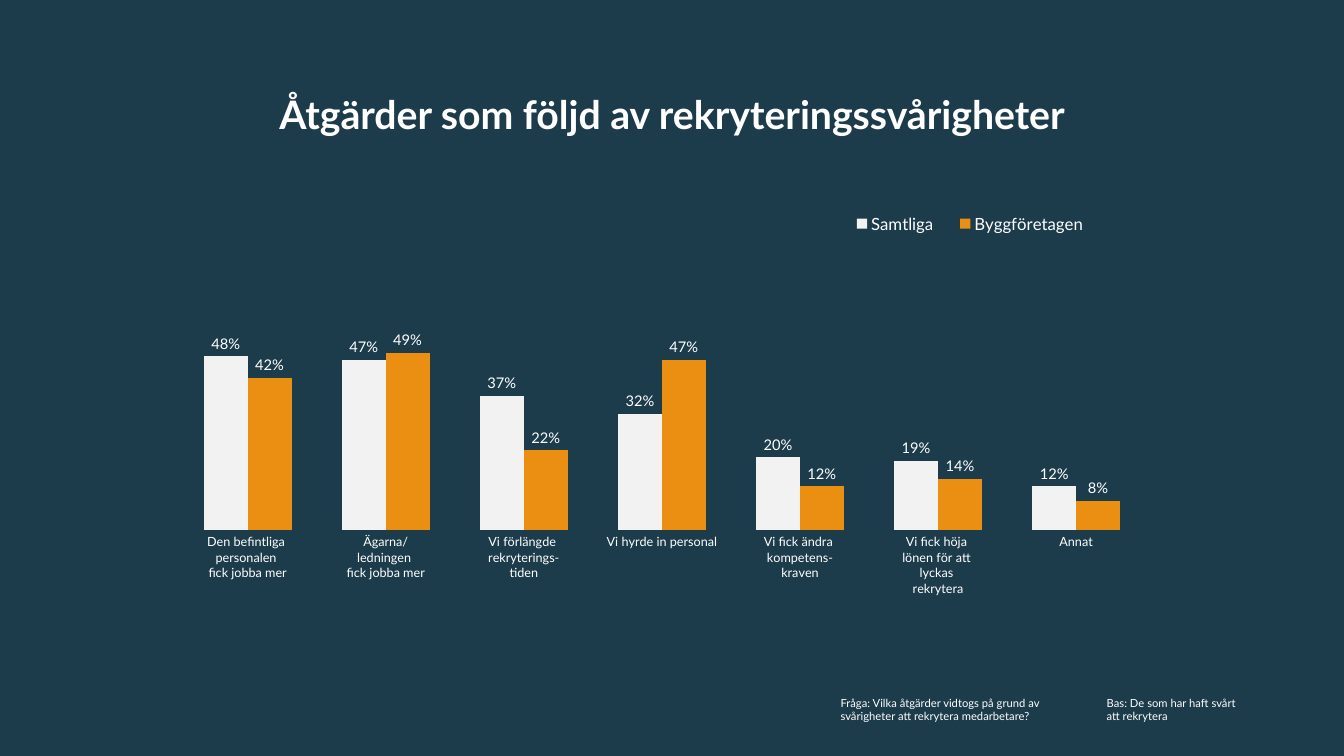
from dataclasses import dataclass

import pptx
import pptx.chart.data
import pptx.dml.color
import pptx.enum.chart
import pptx.enum.text
import pptx.oxml
import pptx.oxml.ns
import pptx.util

Pt = pptx.util.Pt
FONT = "Lato"
COLORS = {
    "background": "1D3C4B",
    "text": "FFFFFF",
    "all": "F2F2F2",
    "builders": "EA8F12",
}


@dataclass(frozen=True)
class Frame:
    left: float
    top: float
    width: float
    height: float

    def lengths(self) -> tuple:
        return tuple(Pt(v) for v in (self.left, self.top, self.width, self.height))


@dataclass(frozen=True)
class Label:
    text: str
    frame: Frame
    size: float
    heading: bool = False


@dataclass(frozen=True)
class Group:
    name: str
    shares: tuple[int, ...]
    color: str


HEADING = Label("Åtgärder som följd av rekryteringssvårigheter",
                Frame(0, 51, 960, 65.5), 28, heading=True)
BASE = Label("Bas: De som har haft svårt att rekrytera",
             Frame(783.4, 493.9, 109.4, 26.6), 8)
QUESTION = Label("Fråga: Vilka åtgärder vidtogs på grund av svårigheter "
                 "att rekrytera medarbetare?",
                 Frame(593.3, 493.9, 190, 26.6), 8)
MEASURES = (
    "Den befintliga \npersonalen \nfick jobba mer",
    "Ägarna/\nledningen \nfick jobba mer",
    "Vi förlängde \nrekryterings-\ntiden",
    "Vi hyrde in personal",
    "Vi fick ändra \nkompetens-\nkraven",
    "Vi fick höja \nlönen för att \nlyckas \nrekrytera",
    "Annat",
)
GROUPS = (
    Group("Samtliga", (48, 47, 37, 32, 20, 19, 12), "all"),
    Group("Byggföretagen", (42, 49, 22, 47, 12, 14, 8), "builders"),
)
CHART_FRAME = Frame(63.4, 116.6, 833.8, 319.7)
# Fractions of the chart frame
PLOT_AREA = Frame(0.077, 0.012, 0.828, 0.807)
LEGEND_AREA = Frame(0.64, 0.1, 0.23, 0.07)


def rgb(name: str) -> pptx.dml.color.RGBColor:
    return pptx.dml.color.RGBColor.from_string(COLORS[name])


def style_font(font, size: float, bold: bool = False) -> None:
    font.name = FONT
    font.size = Pt(size)
    font.bold = bold
    font.color.rgb = rgb("text")


def add_label(slide, label: Label) -> None:
    frame = slide.shapes.add_textbox(*label.frame.lengths()).text_frame
    frame.word_wrap = True
    paragraph = frame.paragraphs[0]
    paragraph.text = label.text
    style_font(paragraph.font, label.size, label.heading)
    if label.heading:
        frame.vertical_anchor = pptx.enum.text.MSO_ANCHOR.MIDDLE
        paragraph.alignment = pptx.enum.text.PP_ALIGN.CENTER
        paragraph.line_spacing = 0.9
    else:
        frame.auto_size = pptx.enum.text.MSO_AUTO_SIZE.SHAPE_TO_FIT_TEXT


def manual_layout(area: Frame, inner: bool = False):
    """Return a c:layout element for an area given in chart fractions."""
    target = '<c:layoutTarget val="inner"/>' if inner else ""
    return pptx.oxml.parse_xml(
        f'<c:layout {pptx.oxml.ns.nsdecls("c")}><c:manualLayout>{target}'
        '<c:xMode val="edge"/><c:yMode val="edge"/>'
        f'<c:x val="{area.left}"/><c:y val="{area.top}"/>'
        f'<c:w val="{area.width}"/><c:h val="{area.height}"/>'
        "</c:manualLayout></c:layout>")


def place_areas(chart) -> None:
    """Fix the places of the plot and the legend inside the chart."""
    root = chart.element
    for layout in root.xpath(".//c:plotArea/c:layout | .//c:legend/c:layout"):
        layout.getparent().remove(layout)
    root.xpath(".//c:plotArea")[0].insert(0, manual_layout(PLOT_AREA, inner=True))
    root.xpath(".//c:legend/c:overlay")[0].addprevious(manual_layout(LEGEND_AREA))


def style_axes(chart) -> None:
    none = pptx.enum.chart.XL_TICK_MARK.NONE
    measures = chart.category_axis
    measures.major_tick_mark = none
    measures.minor_tick_mark = none
    measures.format.line.fill.background()
    style_font(measures.tick_labels.font, 9)
    shares = chart.value_axis
    shares.minimum_scale = 0
    shares.maximum_scale = 100
    shares.major_unit = 20
    shares.has_major_gridlines = False
    shares.visible = False


def style_columns(chart) -> None:
    plot = chart.plots[0]
    plot.gap_width = 115
    plot.overlap = 0
    plot.vary_by_categories = False
    for series, group in zip(plot.series, GROUPS):
        series.format.fill.solid()
        series.format.fill.fore_color.rgb = rgb(group.color)
        labels = series.data_labels
        labels.show_value = True
        labels.number_format = r"##0\%"
        labels.number_format_is_linked = False
        labels.position = pptx.enum.chart.XL_LABEL_POSITION.OUTSIDE_END
        style_font(labels.font, 10.5)


def add_measures_chart(slide) -> None:
    data = pptx.chart.data.CategoryChartData()
    data.categories = MEASURES
    for group in GROUPS:
        data.add_series(group.name, group.shares)
    chart = slide.shapes.add_chart(
        pptx.enum.chart.XL_CHART_TYPE.COLUMN_CLUSTERED,
        *CHART_FRAME.lengths(), data).chart
    style_font(chart.font, 14)
    chart.has_title = False
    chart.has_legend = True
    chart.legend.position = pptx.enum.chart.XL_LEGEND_POSITION.RIGHT
    chart.legend.include_in_layout = False
    style_font(chart.legend.font, 12)
    style_axes(chart)
    style_columns(chart)
    place_areas(chart)


def main() -> None:
    deck = pptx.Presentation()
    deck.slide_width = Pt(960)
    deck.slide_height = Pt(540)
    slide = deck.slides.add_slide(deck.slide_layouts[6])
    slide.background.fill.solid()
    slide.background.fill.fore_color.rgb = rgb("background")
    add_measures_chart(slide)
    for label in (HEADING, BASE, QUESTION):
        add_label(slide, label)
    deck.save("out.pptx")


if __name__ == "__main__":
    main()
